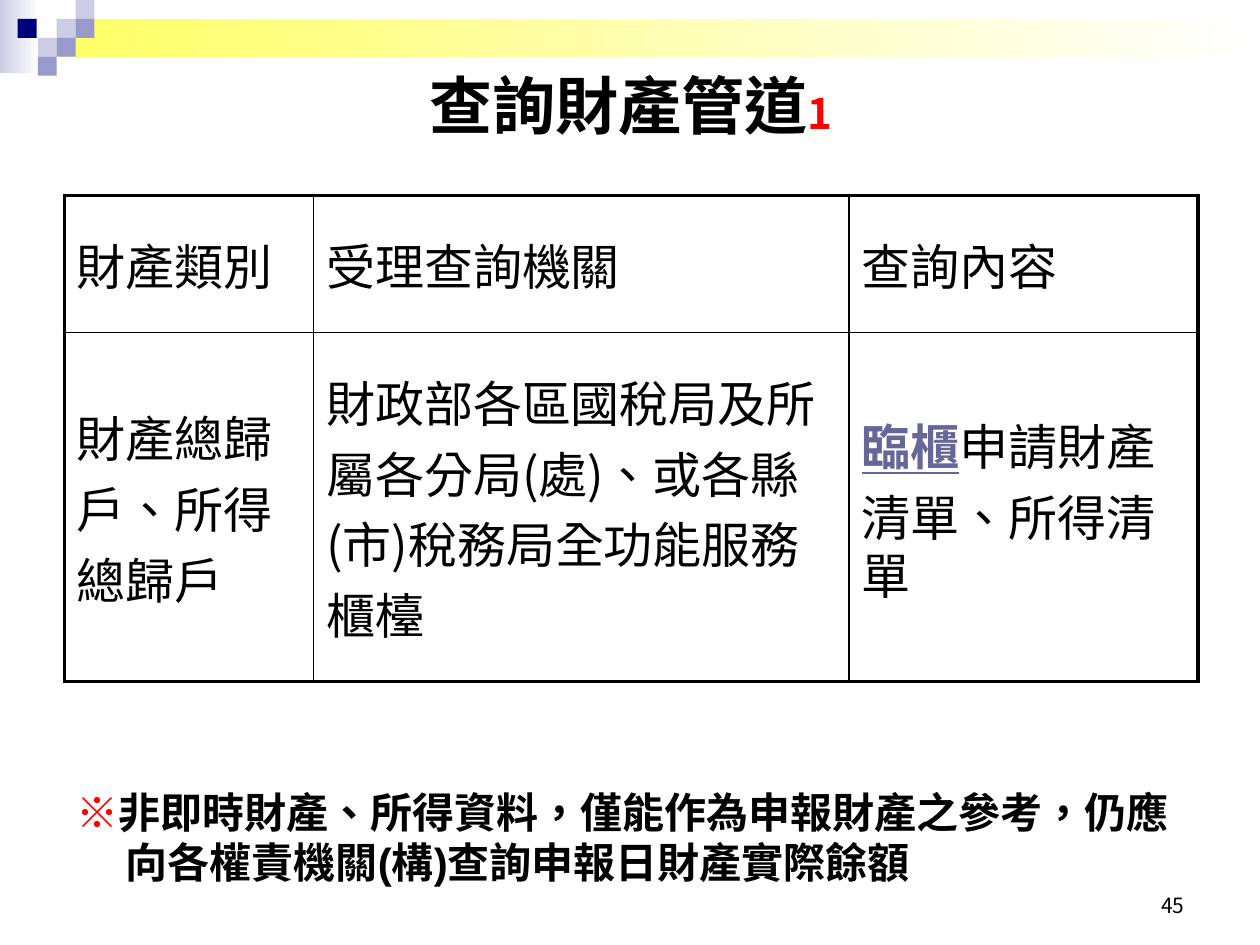
from typing import NamedTuple, Optional

from lxml.etree import SubElement
from pptx import Presentation
from pptx.dml.color import RGBColor
from pptx.enum.shapes import MSO_SHAPE
from pptx.enum.text import MSO_ANCHOR, PP_ALIGN
from pptx.oxml.ns import qn
from pptx.util import Inches, Pt

BLACK = RGBColor(0, 0, 0)
WHITE = RGBColor(0xFF, 0xFF, 0xFF)
RED = RGBColor(0xFF, 0, 0)
NAVY = RGBColor(0, 0, 0x7D)
LILAC = RGBColor(0xCC, 0xCC, 0xE6)
VIOLET = RGBColor(0x99, 0x99, 0xCC)
YELLOW = RGBColor(0xFF, 0xFF, 0x66)
SLATE = RGBColor(0x66, 0x66, 0x99)
NOTO = "Noto Sans CJK SC"
ARIAL = "Arial"
THIN, THICK = Pt(1), Pt(2.25)


class Box(NamedTuple):
    x: float
    y: float
    w: float
    h: float

    def lengths(self) -> list:
        return [Inches(v) for v in self]


class Run(NamedTuple):
    text: str
    size: float = 28
    font: str = NOTO
    color: RGBColor = BLACK
    bold: bool = False
    underline: bool = False


class Tile(NamedTuple):
    x: float
    y: float
    color: RGBColor


TILES = [
    Tile(0.45, 0.15, LILAC), Tile(0.6, 0, LILAC), Tile(0.6, 0.15, VIOLET),
    Tile(0.3, 0.3, LILAC), Tile(0.14, 0.15, NAVY), Tile(0.45, 0.3, VIOLET),
    Tile(0.3, 0.45, VIOLET),
]
COLUMNS = [1.98, 4.25, 2.77]
ROWS = [1.09, 2.77]
CELLS = [
    [[Run("財產類別")], [Run("受理查詢機關")], [Run("查詢內容")]],
    [
        [Run("財產總歸戶、所得總歸戶")],
        [Run("財政部各區國稅局及所屬各分局(處)、或各縣(市)稅務局全功能服務櫃檯")],
        [Run("臨櫃", color=SLATE, bold=True, underline=True),
         Run("申請財產清單"), Run("、所得清單", font=ARIAL)],
    ],
]


def add_rect(s, box: Box, color: RGBColor, fade_to: Optional[RGBColor] = None) -> None:
    """Add a borderless rectangle, fading left to right when fade_to is given."""
    sp = s.shapes.add_shape(MSO_SHAPE.RECTANGLE, *box.lengths())
    sp.shadow.inherit = False
    sp.line.fill.background()
    if fade_to is None:
        sp.fill.solid()
        sp.fill.fore_color.rgb = color
        return
    sp.fill.gradient()
    sp.fill.gradient_angle = 0
    for stop, stop_color, position in zip(sp.fill.gradient_stops, (color, fade_to), (0, 1)):
        stop.color.rgb = stop_color
        stop.position = position


def add_runs(p, runs: list[Run]) -> None:
    for run in runs:
        r = p.add_run()
        r.text = run.text
        f = r.font
        f.size, f.name, f.bold, f.underline = Pt(run.size), run.font, run.bold, run.underline
        f.color.rgb = run.color
        rPr = r._r.get_or_add_rPr()
        rPr.set("lang", "zh-TW")
        east_asian = SubElement(rPr, qn("a:ea"))
        east_asian.set("typeface", run.font)


def add_text(s, box: Box, runs: list[Run], align=PP_ALIGN.LEFT, anchor=MSO_ANCHOR.TOP):
    tf = s.shapes.add_textbox(*box.lengths()).text_frame
    tf.word_wrap = True
    tf.vertical_anchor = anchor
    p = tf.paragraphs[0]
    p.alignment = align
    add_runs(p, runs)
    return p


def set_borders(cell, widths: dict) -> None:
    """Draw black cell borders; widths maps L, R, T, B to line widths."""
    tcPr = cell._tc.get_or_add_tcPr()
    for index, (side, width) in enumerate(widths.items()):
        ln = tcPr.makeelement(qn(f"a:ln{side}"), {"w": str(int(width))})
        fill = SubElement(ln, qn("a:solidFill"))
        SubElement(fill, qn("a:srgbClr")).set("val", str(BLACK))
        tcPr.insert(index, ln)


def add_property_table(s) -> None:
    box = Box(0.51, 1.55, sum(COLUMNS), sum(ROWS))
    table = s.shapes.add_table(len(ROWS), len(COLUMNS), *box.lengths()).table
    table.first_row = table.horz_banding = False
    for column, width in zip(table.columns, COLUMNS):
        column.width = Inches(width)
    for row, height in zip(table.rows, ROWS):
        row.height = Inches(height)
    last_row, last_col = len(ROWS) - 1, len(COLUMNS) - 1
    for i, row_cells in enumerate(CELLS):
        for j, runs in enumerate(row_cells):
            cell = table.cell(i, j)
            cell.fill.background()
            cell.vertical_anchor = MSO_ANCHOR.MIDDLE
            p = cell.text_frame.paragraphs[0]
            p.space_before = Pt(5.6)
            add_runs(p, runs)
            set_borders(cell, {
                "L": THICK if j == 0 else THIN,
                "R": THICK if j == last_col else THIN,
                "T": THICK if i == 0 else THIN,
                "B": THICK if i == last_row else THIN,
            })


def main() -> None:
    prs = Presentation()
    prs.slide_width, prs.slide_height = Inches(10), Inches(7.5)
    s = prs.slides.add_slide(prs.slide_layouts[6])

    add_rect(s, Box(0, 0, 0.31, 0.58), LILAC, fade_to=WHITE)
    add_rect(s, Box(0.45, 0.15, 9.55, 0.3), YELLOW, fade_to=WHITE)
    for tile in TILES:
        add_rect(s, Box(tile.x, tile.y, 0.15, 0.15), tile.color)

    add_text(s, Box(7.17, 6.83, 2.33, 0.5), [Run("45", 12)],
             PP_ALIGN.RIGHT, MSO_ANCHOR.BOTTOM)
    add_text(s, Box(0.51, 0.36, 9, 0.94),
             [Run("查詢財產管道", 36, ARIAL, bold=True), Run("1", 24, color=RED, bold=True)],
             PP_ALIGN.CENTER, MSO_ANCHOR.MIDDLE)
    add_property_table(s)
    note = add_text(s, Box(0.51, 6.19, 8.9, 0.9), [
        Run("※", 24, ARIAL, RED, bold=True),
        Run("非即時財產、所得資料，僅能作為申報財產之參考，仍應向各權責機關(構)查詢申報日財產實際餘額",
            24, ARIAL, bold=True),
    ])
    pPr = note._p.get_or_add_pPr()
    pPr.set("marL", str(Inches(0.39)))
    pPr.set("indent", str(Inches(-0.39)))

    prs.save("out.pptx")


if __name__ == "__main__":
    main()
